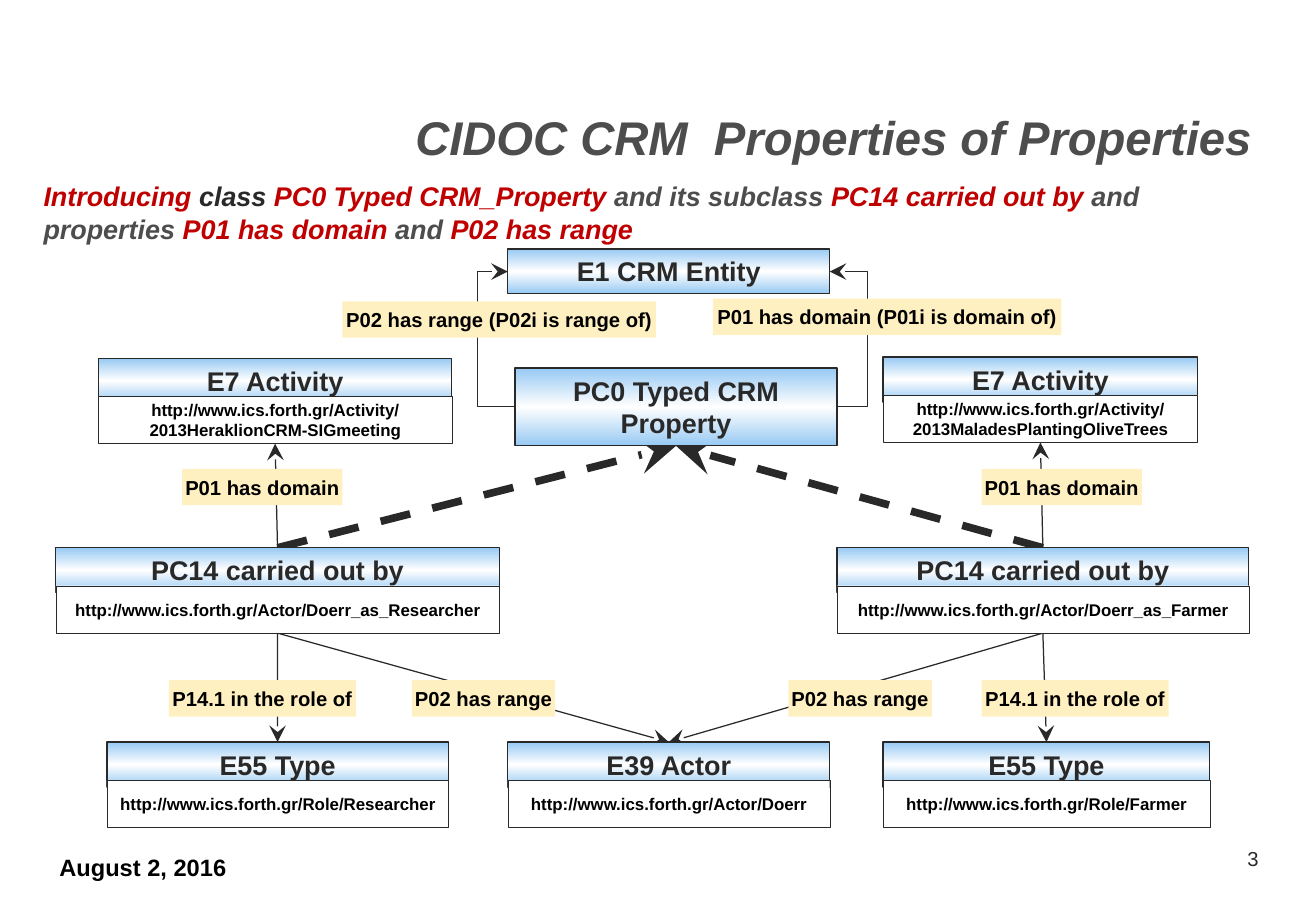
from copy import deepcopy
from dataclasses import dataclass

from lxml.etree import SubElement
from pptx import Presentation
from pptx.dml.color import RGBColor as Rgb
from pptx.enum.dml import MSO_LINE as Dash
from pptx.enum.shapes import MSO_CONNECTOR as Link, MSO_SHAPE as Kind
from pptx.enum.text import MSO_ANCHOR as Anchor, MSO_AUTO_SIZE as Fit, PP_ALIGN as Align
from pptx.oxml.ns import qn
from pptx.util import Pt

TOP, LEFT, BOTTOM, RIGHT = range(4)


@dataclass(frozen=True)
class Theme:
    font: str = "Arial"
    ink: str = "292929"
    gray: str = "4D4D4D"
    red: str = "C00000"
    black: str = "000000"
    white: str = "FFFFFF"
    blue: str = "97C9F3"
    cream: str = "FFF0C2"
    title: int = 28
    head: int = 16
    date: int = 14
    label: int = 12
    url: int = 10


class Board:
    head_high, body_drop, body_high, label_high = 26.6, 22.5, 28.1, 21.6

    def __init__(self, slide, theme):
        self.slide, self.theme = slide, theme

    def letter(self, shape, runs, size, color, align=Align.CENTER, bold=True,
               slant=False, pad=(7.2, 3.6), anchor=Anchor.TOP, wrap=True, fit=Fit.NONE):
        """Fill a shape with one paragraph of (text, color) runs."""
        frame = shape.text_frame
        frame.word_wrap, frame.auto_size = wrap, fit
        frame.vertical_anchor = anchor
        frame.margin_left = frame.margin_right = Pt(pad[0])
        frame.margin_top = frame.margin_bottom = Pt(pad[1])
        para = frame.paragraphs[0]
        para.alignment = align
        font = para.font
        font.name, font.size, font.bold, font.italic = self.theme.font, Pt(size), bold, slant
        if isinstance(runs, str):
            font.color.rgb = Rgb.from_string(color)
            runs = [(runs, color)]
        for words, tint in runs:
            run = para.add_run()
            run.text = words
            run.font.color.rgb = Rgb.from_string(tint)

    def text(self, x, y, w, h, runs, size, color, **look):
        box = self.slide.shapes.add_textbox(Pt(x), Pt(y), Pt(w), Pt(h))
        self.letter(box, runs, size, color, **look)

    def rect(self, x, y, w, h, fill=None, line=None):
        box = self.slide.shapes.add_shape(Kind.RECTANGLE, Pt(x), Pt(y), Pt(w), Pt(h))
        box.shadow.inherit = False
        if fill:
            box.fill.solid()
            box.fill.fore_color.rgb = Rgb.from_string(fill)
        if line:
            box.line.width = Pt(line)
            box.line.color.rgb = Rgb.from_string(self.theme.ink)
        else:
            box.line.fill.background()
        return box

    def head(self, x, y, w, words, h=head_high):
        """Box with a blue-white-blue gradient."""
        box = self.rect(x, y, w, h, line=0.75)
        box.fill.gradient()
        box.fill.gradient_angle = 90
        edge, mid = box.fill.gradient_stops
        edge.color.rgb = Rgb.from_string(self.theme.blue)
        mid.color.rgb = Rgb.from_string(self.theme.white)
        mid.position = 0.5
        stops = box.element.spPr.find(".//" + qn("a:gsLst"))
        last = deepcopy(stops[0])
        last.set("pos", "100000")
        stops.append(last)
        self.letter(box, words, self.theme.head, self.theme.ink, pad=(4.3, 3.6))
        return box

    def card(self, x, y, w, words, url):
        """Class header with the address of an instance below it."""
        head = self.head(x, y, w, words)
        body = self.rect(x, y + self.body_drop, w, self.body_high, self.theme.white, 0.25)
        self.letter(body, url, self.theme.url, self.theme.black, anchor=Anchor.MIDDLE)
        return head, body

    def label(self, x, y, w, words):
        box = self.rect(x, y, w, self.label_high, self.theme.cream)
        self.letter(box, words, self.theme.label, self.theme.black,
                    pad=(1.4, 3.6), wrap=False, fit=Fit.SHAPE_TO_FIT_TEXT)

    def style(self, line, width=0.75, dash=None):
        line.line.width = Pt(width)
        line.line.color.rgb = Rgb.from_string(self.theme.ink)
        if dash:
            line.line.dash_style = dash
        props = line.element.spPr
        SubElement(props.find(qn("a:ln")), qn("a:tailEnd"), type="stealth", w="lg", len="lg")
        SubElement(props, qn("a:effectLst"))
        self.slide.shapes.element.insert(2, line.element)  # behind the boxes

    def arrow(self, start, side, end, goal, **look):
        line = self.slide.shapes.add_connector(Link.STRAIGHT, 0, 0, 0, 0)
        line.begin_connect(start, side)
        line.end_connect(end, goal)
        self.style(line, **look)

    def elbow(self, x1, y1, x2, y2, bend):
        line = self.slide.shapes.add_connector(Link.ELBOW, Pt(x1), Pt(y1), Pt(x2), Pt(y2))
        geom = line.element.spPr.find(qn("a:prstGeom"))
        guides = geom.find(qn("a:avLst"))
        if guides is None:
            guides = SubElement(geom, qn("a:avLst"))
        ratio = round((bend - x1) / (x2 - x1) * 100000)
        SubElement(guides, qn("a:gd"), name="adj1", fmla=f"val {ratio}")
        self.style(line)


def main():
    deck = Presentation()
    deck.slide_width, deck.slide_height = Pt(780), Pt(540)
    look = Theme()
    board = Board(deck.slides.add_slide(deck.slide_layouts[6]), look)

    # Title and introduction
    board.text(151.9, 9.4, 596.9, 92.2, "CIDOC CRM  Properties of Properties", look.title,
               look.gray, align=Align.RIGHT, slant=True, anchor=Anchor.BOTTOM)
    intro = [("Introducing ", look.red), ("class ", look.ink),
             ("PC0 Typed CRM_Property ", look.red), ("and its subclass ", look.gray),
             ("PC14 carried out by ", look.red), ("and properties ", look.gray),
             ("P01 has domain ", look.red), ("and ", look.gray), ("P02 has range", look.red)]
    board.text(18.7, 103, 721.4, 45.4, intro, look.head, look.gray,
               align=Align.LEFT, slant=True)

    # Classes in the middle
    site = "http://www.ics.forth.gr/"
    board.head(301, 147.6, 190.8, "E1 CRM Entity")
    typed = board.head(305.3, 218.2, 190.8, "PC0 Typed CRM Property", 46.1)
    actor, _ = board.card(301, 439.9, 190.8, "E39 Actor", site + "Actor/Doerr")
    board.elbow(496.1, 241.2, 491.8, 161, 514.1)
    board.elbow(305.3, 241.2, 301, 161, 283)

    # Both sides: event card, its name, (x, width) of property and type cards, role
    sides = [
        ((58.3, 212.4, 209.5), "2013HeraklionCRM-SIGmeeting", (33.1, 262.8), (63.4, 202.3),
         "Researcher"),
        ((523.4, 211.7, 186.5), "2013MaladesPlantingOliveTrees", (496.1, 244.1), (523.4, 193.7),
         "Farmer"),
    ]
    for event, name, (px, pw), (rx, rw), role in sides:
        _, act = board.card(*event, "E7 Activity", site + "Activity/" + name)
        head, body = board.card(px, 324.7, pw, "PC14 carried out by",
                                site + "Actor/Doerr_as_" + role)
        kind, _ = board.card(rx, 439.9, rw, "E55 Type", site + "Role/" + role)
        board.arrow(head, TOP, act, BOTTOM)
        board.arrow(body, BOTTOM, kind, TOP)
        board.arrow(body, BOTTOM, actor, TOP)
        board.arrow(head, TOP, typed, BOTTOM, width=4.5, dash=Dash.DASH)

    # Property labels
    board.label(422.6, 177.1, 206.6, "P01 has domain (P01i is domain of)")
    board.label(203, 178.6, 185.8, "P02 has range (P02i is range of)")
    for words, y, w, spots in [("P01 has domain", 277.9, 95, (108, 581.8)),
                               ("P14.1 in the role of", 403.2, 110.9, (100.1, 581.8)),
                               ("P02 has range", 403.2, 85, (244.1, 467.3))]:
        for x in spots:
            board.label(x, y, w, words)

    # Footer
    board.text(28.1, 501.8, 113.8, 24.5, "August 2, 2016", look.date, look.black,
               align=Align.LEFT, wrap=False)
    board.text(732.2, 498.2, 35.3, 30.2, "3", look.label, look.ink,
               align=Align.LEFT, bold=False)

    deck.save("out.pptx")


if __name__ == "__main__":
    main()
